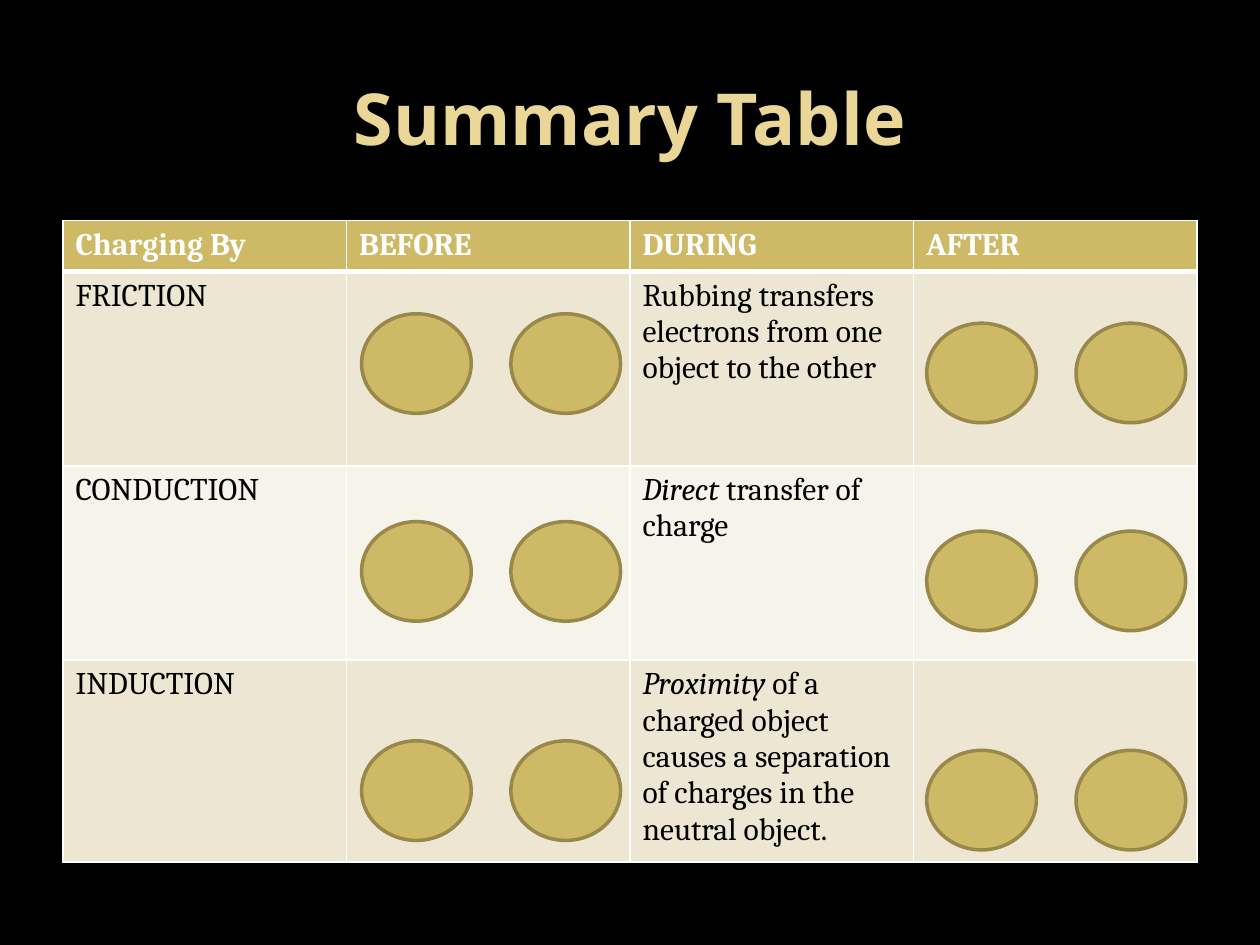
from dataclasses import dataclass

from lxml import etree
from pptx import Presentation
from pptx import util as u
from pptx.dml.color import RGBColor
from pptx.enum import shapes, text
from pptx.oxml import ns


@dataclass(frozen=True)
class Theme:
    back: str = "000000"
    title: str = "EAD696"
    gold: str = "CEB966"
    edge: str = "98894B"
    bands: tuple = ("EDE6D3", "F6F3EA")
    ink: str = "000000"
    light: str = "FFFFFF"
    head: str = "Noto Sans"
    body: str = "Cambria"
    large: int = 41
    small: int = 18


def paint(fill, color):
    fill.solid()
    fill.fore_color.rgb = RGBColor.from_string(color)


class Deck:
    COLS, ROWS = 40, 30

    def __init__(self, theme):
        self.theme = theme
        self.show = Presentation()
        self.show.slide_width, self.show.slide_height = u.Inches(10), u.Inches(7.5)
        self.slide = self.show.slides.add_slide(self.show.slide_layouts[6])
        paint(self.slide.background.fill, theme.back)

    def across(self, cols):
        return round(self.show.slide_width * cols / self.COLS)

    def down(self, rows):
        return round(self.show.slide_height * rows / self.ROWS)

    def box(self, left, top, width, height):
        return self.across(left), self.down(top), self.across(width), self.down(height)

    def style(self, run, face, size, color, bold=False):
        run.font.name, run.font.size, run.font.bold = face, u.Pt(size), bold
        run.font.color.rgb = RGBColor.from_string(color)

    def title(self, words, *area):
        frame = self.slide.shapes.add_textbox(*self.box(*area)).text_frame
        frame.word_wrap = True
        frame.vertical_anchor = text.MSO_ANCHOR.MIDDLE
        frame.text = words
        line = frame.paragraphs[0]
        line.alignment = text.PP_ALIGN.CENTER
        self.style(line.runs[0], self.theme.head, self.theme.large, self.theme.title, True)

    def border(self, cell, widths):
        props = cell._tc.get_or_add_tcPr()
        for side, width in widths.items():
            line = etree.SubElement(props, ns.qn(f"a:ln{side}"), w=str(u.Pt(width)))
            fill = etree.SubElement(line, ns.qn("a:solidFill"))
            etree.SubElement(fill, ns.qn("a:srgbClr"), val=self.theme.light)

    def cell(self, cell, row, parts):
        top = row == 0
        self.border(cell, {"L": 1, "R": 1, "T": 3 if row == 1 else 1, "B": 3 if top else 1})
        bands = self.theme.bands
        paint(cell.fill, self.theme.gold if top else bands[(row - 1) % len(bands)])
        line = cell.text_frame.paragraphs[0]
        line.font.size = u.Pt(self.theme.small)
        color = self.theme.light if top else self.theme.ink
        for words, slant in parts:
            run = line.add_run()
            run.text = words
            self.style(run, self.theme.body, self.theme.small, color, top)
            run.font.italic = slant

    def table(self, data, heights, left, top, width):
        area = self.box(left, top, width, sum(heights))
        grid = self.slide.shapes.add_table(len(data), len(data[0]), *area).table
        for col in grid.columns:
            col.width = self.across(width / len(data[0]))
        for row, (cells, height) in enumerate(zip(data, heights)):
            grid.rows[row].height = self.down(height)
            for col, parts in enumerate(cells):
                self.cell(grid.cell(row, col), row, parts)

    def ball(self, *area):
        ball = self.slide.shapes.add_shape(shapes.MSO_SHAPE.OVAL, *self.box(*area))
        ball.shadow.inherit = False
        paint(ball.fill, self.theme.gold)
        paint(ball.line.fill, self.theme.edge)
        ball.line.width = u.Pt(2)

    def pair(self, left, top, gap=4.74, width=3.48, height=3.16):
        for step in range(2):
            self.ball(left + step * gap, top, width, height)


def plain(words):
    return [(words, False)]


def main():
    deck = Deck(Theme())
    deck.title("Summary Table", 2, 1.2, 36, 5)
    data = [
        [plain(name) for name in ("Charging By", "BEFORE", "DURING", "AFTER")],
        [plain("FRICTION"), [],
         plain("Rubbing transfers electrons from one object to the other"), []],
        [plain("CONDUCTION"), [],
         [("Direct", True), (" transfer of charge", False)], []],
        [plain("INDUCTION"), [],
         [("Proximity", True),
          (" of a charged object causes a separation of charges in the neutral object.", False)],
         []],
    ]
    deck.table(data, [1.62] + [6.17] * 3, 2, 7, 36)
    for left, drop in ((11.48, 0), (29.42, 0.3)):
        for top in (9.96, 16.56, 23.52):
            deck.pair(left, top + drop)
    deck.show.save("out.pptx")


if __name__ == "__main__":
    main()
